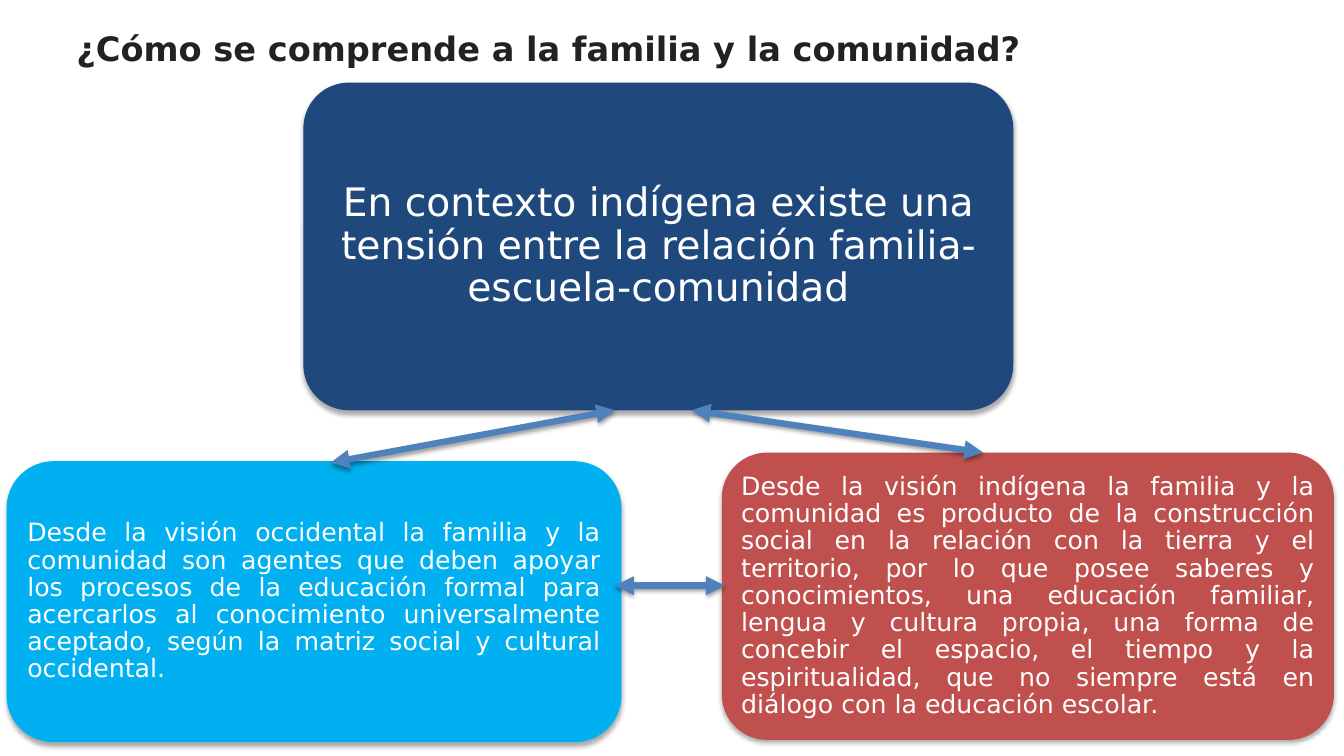
from pptx import Presentation
from pptx.dml.color import RGBColor
from pptx.enum.shapes import MSO_CONNECTOR, MSO_SHAPE
from pptx.enum.text import MSO_ANCHOR, PP_ALIGN
from pptx.oxml import parse_xml
from pptx.oxml.ns import nsdecls, qn
from pptx.util import Emu, Pt

PX = 9144  # 100 px to the inch
CORNER = 45
CORNER_INSET = 13  # text inset that the rounded corners already give


def write_text(shape, text, size, color, bold=False, align=PP_ALIGN.LEFT, spacing=1.0):
    paragraph = shape.text_frame.paragraphs[0]
    paragraph.alignment = align
    paragraph.line_spacing = spacing
    run = paragraph.add_run()
    run.text = text
    run.font.name = "DejaVu Sans"
    run.font.size = Pt(size)
    run.font.bold = bold
    run.font.color.rgb = RGBColor.from_string(color)


def add_shadow(shape, opacity, blur, distance):
    shape.element.spPr.append(parse_xml(
        f'<a:effectLst {nsdecls("a")}><a:outerShdw blurRad="{Pt(blur)}" dist="{Pt(distance)}" '
        f'dir="5400000" rotWithShape="0"><a:srgbClr val="000000">'
        f'<a:alpha val="{opacity * 1000}"/></a:srgbClr></a:outerShdw></a:effectLst>'))


presentation = Presentation()
presentation.slide_width = Emu(1333 * PX)
presentation.slide_height = Emu(750 * PX)
slide = presentation.slides.add_slide(presentation.slide_layouts[6])

# Title
title = slide.shapes.add_textbox(66 * PX, 23 * PX, 963 * PX, 50 * PX)
title.text_frame.word_wrap = False
write_text(title, "¿Cómo se comprende a la familia y la comunidad?", 24, "222222", bold=True)

# Idea boxes: position, fill, outline, text size, alignment, text
boxes = [
    ((716, 449, 607, 285), "C0504D", None, 18, PP_ALIGN.JUSTIFY,
     "Desde la visión indígena la familia y la comunidad es producto de la construcción social "
     "en la relación con la tierra y el territorio, por lo que posee saberes y conocimientos, "
     "una educación familiar, lengua y cultura propia, una forma de concebir el espacio, el "
     "tiempo y la espiritualidad, que no siempre está en diálogo con la educación escolar."),
    ((8, 459, 607, 276), "00B0F0", "00B0F0", 18, PP_ALIGN.JUSTIFY,
     "Desde la visión occidental la familia y la comunidad son agentes que deben apoyar los "
     "procesos de la educación formal para acercarlos al conocimiento universalmente aceptado, "
     "según la matriz social y cultural occidental."),
    ((301, 82, 704, 325), "1F497D", None, 28, PP_ALIGN.CENTER,
     "En contexto indígena existe una tensión entre la relación familia-escuela-comunidad"),
]
for bounds, fill, outline, size, align, text in boxes:
    box = slide.shapes.add_shape(MSO_SHAPE.ROUNDED_RECTANGLE, *[value * PX for value in bounds])
    box.adjustments[0] = CORNER / min(bounds[2:])
    box.fill.solid()
    box.fill.fore_color.rgb = RGBColor.from_string(fill)
    if outline:
        box.line.color.rgb = RGBColor.from_string(outline)
        box.line.width = Pt(2)
    else:
        box.line.fill.background()
    add_shadow(box, 32, 3.5, 2.2)
    frame = box.text_frame
    frame.word_wrap = True
    frame.vertical_anchor = MSO_ANCHOR.MIDDLE
    margin = (19 - CORNER_INSET) * PX
    frame.margin_left = frame.margin_right = frame.margin_top = frame.margin_bottom = margin
    write_text(box, text, size, "FFFFFF", align=align, spacing=0.9)

# Two-way arrows between the ideas
for ends in [(686, 407, 975, 449), (610, 407, 328, 459), (610, 581, 719, 581)]:
    arrow = slide.shapes.add_connector(MSO_CONNECTOR.STRAIGHT, *[value * PX for value in ends])
    arrow.line.color.rgb = RGBColor.from_string("4F81BD")
    arrow.line.width = Pt(4.5)
    line = arrow.element.spPr.find(qn("a:ln"))
    for end in ("headEnd", "tailEnd"):
        line.append(parse_xml(f'<a:{end} {nsdecls("a")} type="triangle"/>'))
    add_shadow(arrow, 38, 3.1, 1.6)

presentation.save("out.pptx")
